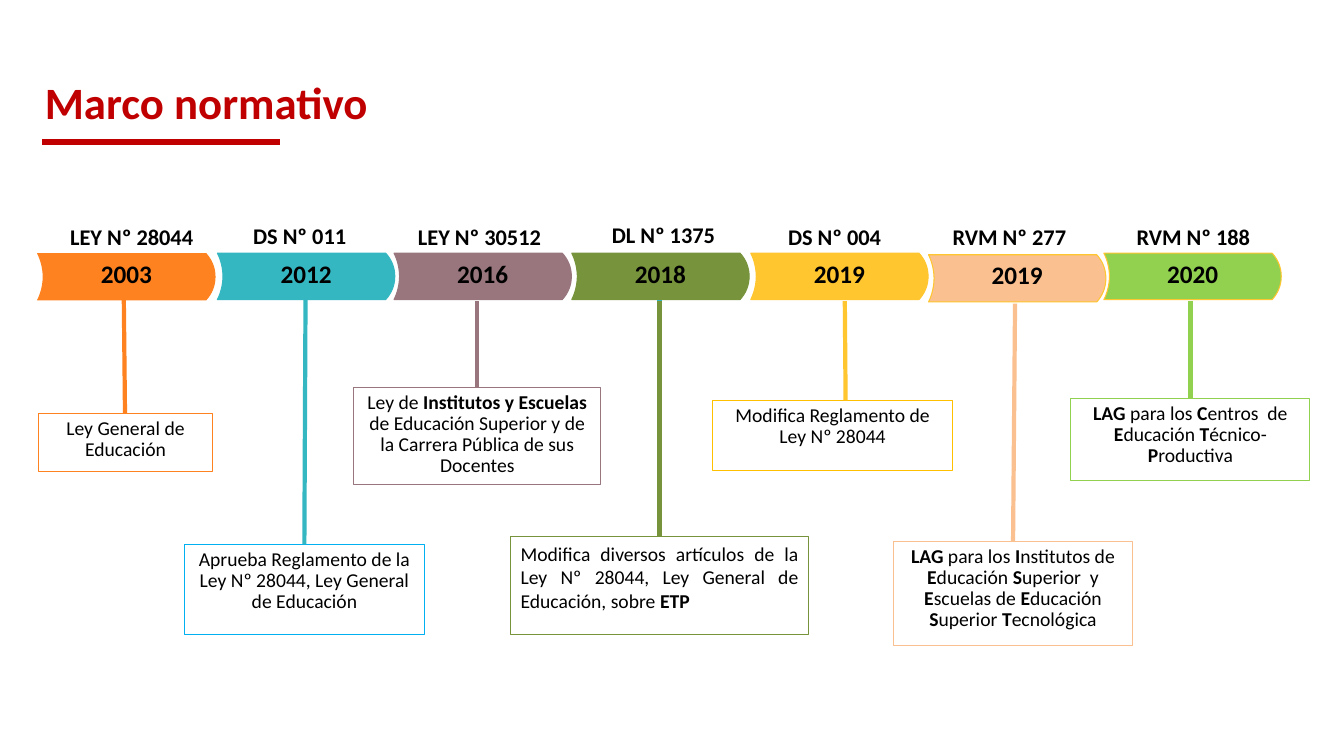
from pptx import Presentation
from pptx.dml.color import RGBColor
from pptx.enum.shapes import MSO_CONNECTOR as CONN, MSO_SHAPE as SHAPE
from pptx.enum.text import MSO_ANCHOR as ANCHOR, PP_ALIGN as AL
from pptx.oxml.ns import qn
from pptx.util import Cm, Pt
from lxml import etree


def paint(fmt, color):
    fmt.solid()
    fmt.fore_color.rgb = RGBColor.from_string(color)


def write(sp, text, size, align=AL.CENTER, bold=False, color="000000", spacing=1.0, inset=True):
    tf = sp.text_frame
    tf.word_wrap = True
    tf.vertical_anchor = ANCHOR.TOP
    if not inset:
        tf.margin_left = tf.margin_right = tf.margin_top = tf.margin_bottom = 0
    p = tf.paragraphs[0]
    p.alignment = align
    p.line_spacing = spacing
    for i, part in enumerate(text.split("*")):
        if part:
            r = p.add_run()
            r.text = part
            r.font.name = "Calibri"
            r.font.size = Pt(size)
            r.font.bold = bold or i % 2 == 1
            paint(r.font.fill, color)


prs = Presentation()
prs.slide_width, prs.slide_height = Cm(33.87), Cm(19.05)
s = prs.slides.add_slide(prs.slide_layouts[6])

title = s.shapes.add_textbox(Cm(0.88), Cm(1.63), Cm(31.88), Cm(2.01))
write(title, "Marco normativo", 32, AL.LEFT, True, "C00000", 0.9)
title.text_frame.vertical_anchor = ANCHOR.MIDDLE

milestones = [
    dict(year="2003", fill="FF8220", edge="FF8220", arrow=(0.95, 6.39, 1.17),
         label="LEY Nº 28044", label_at=(0.96, 5.63, 4.72), label_al=AL.CENTER,
         note="Ley General de Educación", note_edge="FF8220",
         box=(0.97, 10.42, 4.39, 1.46), note_al=AL.CENTER, spacing=0.9),
    dict(year="2012", fill="35B7C2", edge="35B7C2", arrow=(5.48, 6.38, 1.17),
         label="DS Nº 011", label_at=(6.38, 5.6, 4.04), label_al=AL.LEFT,
         note="Aprueba Reglamento de la Ley Nº 28044, Ley General de Educación",
         note_edge="00B0F0", box=(4.65, 13.72, 6.05, 2.28), note_al=AL.CENTER, spacing=0.9),
    dict(year="2016", fill="99767E", edge="99767E", arrow=(9.93, 6.38, 1.17),
         label="LEY Nº 30512", label_at=(8.59, 5.63, 6.99), label_al=AL.CENTER,
         note="Ley de* Institutos y Escuelas* de Educación Superior y de la Carrera Pública de sus Docentes",
         note_edge="99767E", box=(8.92, 9.76, 6.22, 2.45), note_al=AL.CENTER, spacing=0.9),
    dict(year="2019", fill="FAC090", edge="FFC62F", arrow=(23.4, 6.42, 1.19),
         label="RVM Nº 277", label_at=(22.53, 5.63, 5.82), label_al=AL.CENTER,
         note="*LAG* para los *I*nstitutos de *E*ducación *S*uperior  y "
              "*E*scuelas de *E*ducación *S*uperior *T*ecnológica",
         note_edge="FAC090", box=(22.51, 13.64, 6.04, 2.62), note_al=AL.CENTER, spacing=0.9),
    dict(year="2019", fill="FFC62F", edge="FFC62F", arrow=(18.92, 6.38, 1.17),
         label="DS Nº 004", label_at=(19.86, 5.63, 4.14), label_al=AL.LEFT,
         note="Modifica Reglamento de Ley Nº 28044", note_edge="FFC000",
         box=(17.96, 10.09, 6.05, 1.76), note_al=AL.CENTER, spacing=0.9),
    dict(year="2020", fill="92D050", edge="FFC62F", arrow=(27.82, 6.38, 1.17),
         label="RVM Nº 188", label_at=(26.58, 5.63, 6.99), label_al=AL.CENTER,
         note="*LAG* para los *C*entros  de *E*ducación *T*écnico-*P*roductiva",
         note_edge="92D050", box=(26.99, 10.04, 6.02, 2.07), note_al=AL.CENTER, spacing=0.9),
    dict(year="2018", fill="77933C", edge="77933C", arrow=(14.41, 6.38, 1.17),
         label="DL Nº 1375", label_at=(14.69, 5.58, 4.06), label_al=AL.CENTER,
         note="Modifica diversos artículos de la Ley Nº 28044, Ley General de Educación, sobre *ETP*",
         note_edge="77933C", box=(12.87, 13.52, 7.51, 2.47), note_al=AL.JUSTIFY, spacing=1.0),
]
curves = [
    [(4.47, 0.3), (4.38, 0.13), (4.24, 0)],
    [(0, 0)] * 3,
    [(0.08, 0.13), (0.14, 0.32), (0.14, 0.5)],
    [(0.14, 0.68), (0.08, 0.87), (0, 1)],
    [(4.24, 1)] * 3,
    [(4.38, 0.87), (4.47, 0.7), (4.47, 0.5)],
]
for m in milestones:
    x, y, h = m["arrow"]
    fb = s.shapes.build_freeform(Cm(x + 4.47), Cm(y + h / 2))
    fb.add_line_segments([(Cm(x + c[2][0]), Cm(y + h * c[2][1])) for c in curves], close=True)
    sp = fb.convert_to_shape()
    for line, curve in zip(list(sp.element.iter(qn("a:lnTo"))), curves):
        bez = etree.Element(qn("a:cubicBezTo"))
        for px, py in curve:
            etree.SubElement(bez, qn("a:pt"), x=str(Cm(px)), y=str(Cm(h * py)))
        line.getparent().replace(line, bez)
    sp.shadow.inherit = False
    paint(sp.fill, m["fill"])
    paint(sp.line.fill, m["edge"])
    sp.line.width = Pt(0.75)
    write(sp, m["year"], 18, bold=True)

    lx, ly, lw = m["label_at"]
    tb = s.shapes.add_textbox(Cm(lx), Cm(ly), Cm(lw), Cm(0.99))
    write(tb, m["label"], 16, m["label_al"], True, inset=False)

    sp = s.shapes.add_shape(SHAPE.RECTANGLE, *[Cm(v) for v in m["box"]])
    sp.shadow.inherit = False
    sp.fill.background()
    paint(sp.line.fill, m["note_edge"])
    sp.line.width = Pt(0.75)
    write(sp, m["note"], 14, m["note_al"], spacing=m["spacing"])

lines = [
    ("C00000", 4.5, (1.07, 3.58, 7.06, 3.58)),
    ("FF8220", 3, (3.15, 10.42, 3.12, 7.54)),
    ("35B7C2", 3, (7.67, 13.72, 7.7, 7.39)),
    ("99767E", 3, (12.02, 9.76, 12.02, 7.59)),
    ("35B7C2", 3, (16.62, 9.47, 16.62, 7.57)),
    ("77933C", 3, (16.62, 13.52, 16.62, 7.59)),
    ("FFC62F", 3, (21.31, 10.09, 21.29, 7.59)),
    ("FAC090", 3, (25.53, 13.64, 25.58, 7.65)),
    ("92D050", 3, (30, 10.04, 30, 7.59)),
]
for color, width, ends in lines:
    c = s.shapes.add_connector(CONN.STRAIGHT, *[Cm(v) for v in ends])
    paint(c.line.fill, color)
    c.line.width = Pt(width)
    etree.SubElement(c.element.spPr, qn("a:effectLst"))

prs.save("out.pptx")
